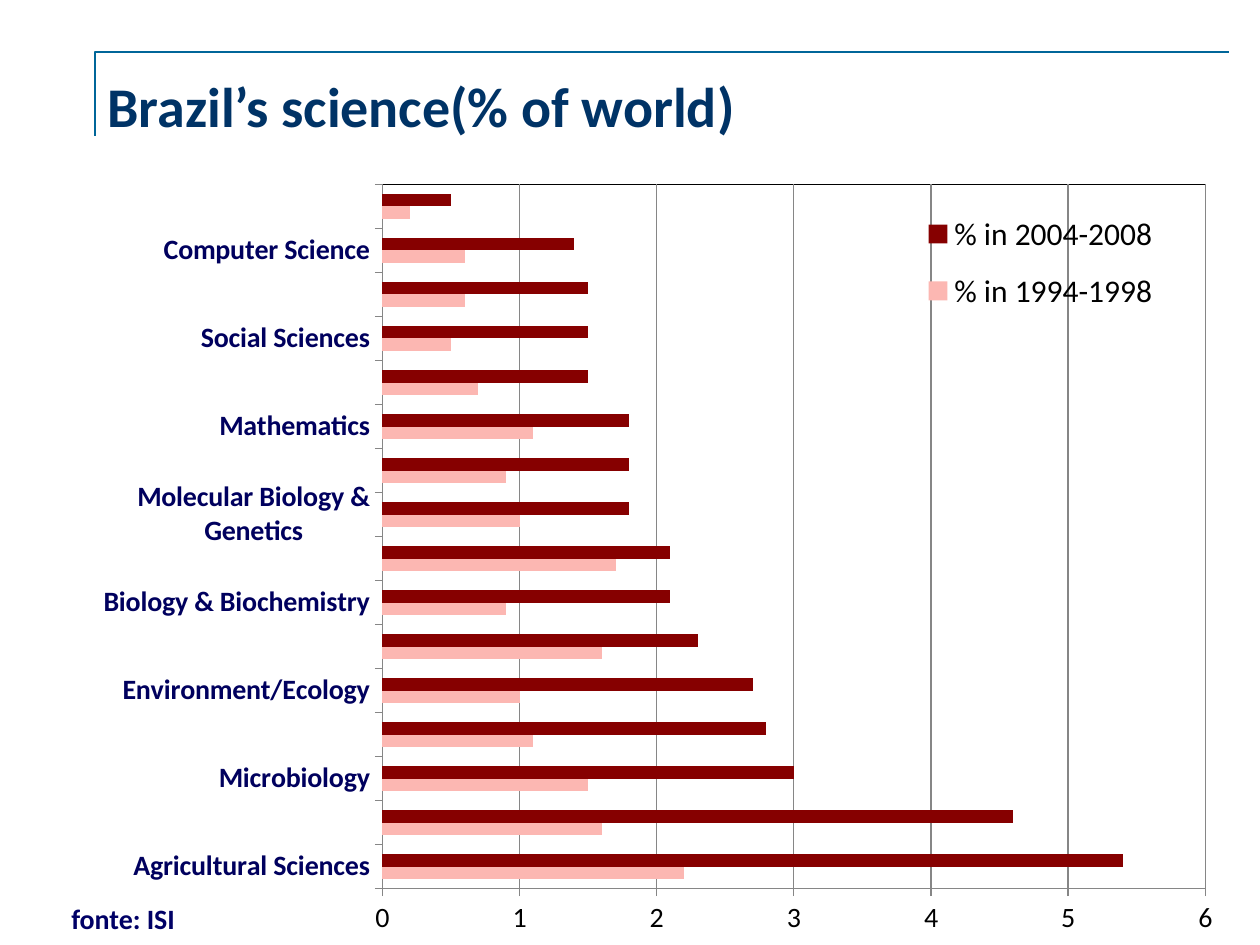
"""Build a slide comparing Brazil's share of world science by field."""
from lxml import etree
from pptx import Presentation
from pptx.chart.data import CategoryChartData
from pptx.dml.color import RGBColor
from pptx.enum.chart import XL_CHART_TYPE as ChartType, XL_LEGEND_POSITION as LegendPosition
from pptx.enum.chart import XL_TICK_MARK as TickMark
from pptx.enum.text import MSO_ANCHOR as Anchor, MSO_AUTO_SIZE as AutoSize, PP_ALIGN as Align
from pptx.oxml import parse_xml
from pptx.oxml.ns import nsdecls, qn
from pptx.util import Emu, Pt

PX = 914400 / 126
BLACK = RGBColor(0x00, 0x00, 0x00)
GRID = RGBColor(0x86, 0x86, 0x86)
FRAME = RGBColor(0x00, 0x66, 0x99)
TITLE = RGBColor(0x00, 0x33, 0x66)
SOURCE = RGBColor(0x00, 0x00, 0x66)
LABEL = RGBColor(0x00, 0x00, 0x5E)
PINK = RGBColor(0xFC, 0xB7, 0xB2)
MAROON = RGBColor(0x86, 0x00, 0x00)

FIELDS = [
    ("Agricultural Sciences", 2.2, 5.4),
    ("Plant & Animal Science", 1.6, 4.6),
    ("Microbiology", 1.5, 3),
    ("Pharmacology & Toxicology", 1.1, 2.8),
    ("Environment/Ecology", 1, 2.7),
    ("Physics", 1.6, 2.3),
    ("Biology & Biochemistry", 0.9, 2.1),
    ("Space Science", 1.7, 2.1),
    ("Molecular Biology & Genetics", 1, 1.8),
    ("Chemistry", 0.9, 1.8),
    ("Mathematics", 1.1, 1.8),
    ("Materials Science", 0.7, 1.5),
    ("Social Sciences", 0.5, 1.5),
    ("Engineering", 0.6, 1.5),
    ("Computer Science", 0.6, 1.4),
    ("Economics & Business", 0.2, 0.5),
]


def box(*lengths):
    return [Emu(round(length * PX)) for length in lengths]


def place(element, index, target, x, y, w, h):
    for layout in element.findall(qn("c:layout")):
        element.remove(layout)
    layout = etree.Element(qn("c:layout"))
    manual = etree.SubElement(layout, qn("c:manualLayout"))
    values = {"xMode": "edge", "yMode": "edge", "x": x, "y": y, "w": w, "h": h}
    if target:
        values = {"layoutTarget": target, **values}
    for name, value in values.items():
        etree.SubElement(manual, qn(f"c:{name}")).set("val", str(value))
    element.insert(index, layout)


presentation = Presentation()
presentation.slide_width, presentation.slide_height = box(1260, 945)
slide = presentation.slides.add_slide(presentation.slide_layouts[5])

builder = slide.shapes.build_freeform(95, 136, scale=PX)
builder.add_line_segments([(95, 52), (1229, 52)], close=False)
frame = builder.convert_to_shape()
frame.shadow.inherit = False
frame.fill.background()
frame.line.color.rgb = FRAME
frame.line.width = Pt(1.5)

title = slide.shapes.title
title.left, title.top, title.width, title.height = box(95, 53, 1124, 105)
source = slide.shapes.add_textbox(*box(59, 896, 164, 49))
texts = [
    (title, "Brazil’s science(% of world)", 32, TITLE, 1),
    (source, "fonte: ISI", 16, SOURCE, 0.9),
]
for shape, text, size, color, spacing in texts:
    text_frame = shape.text_frame
    text_frame.text = text
    text_frame.word_wrap = True
    text_frame.auto_size = AutoSize.NONE
    text_frame.vertical_anchor = Anchor.MIDDLE
    paragraph = text_frame.paragraphs[0]
    paragraph.alignment = Align.LEFT
    paragraph.line_spacing = spacing
    font = paragraph.runs[0].font
    for name, value in {"name": "Calibri", "size": Pt(size), "bold": True}.items():
        setattr(font, name, value)
    font.color.rgb = color

categories, earlier, later = zip(*FIELDS)
data = CategoryChartData()
data.categories = categories
data.add_series("% in 1994-1998", earlier)
data.add_series("% in 2004-2008", later)
chart = slide.shapes.add_chart(ChartType.BAR_CLUSTERED, *box(74, 165, 1186, 780), data).chart
chart.has_title = False
chart.has_legend = True
chart.legend.position = LegendPosition.RIGHT
chart.legend.include_in_layout = False

plot = chart.plots[0]
plot.vary_by_categories = False
plot.gap_width = 150
plot.overlap = 0
for series, color in zip(plot.series, (PINK, MAROON)):
    series.format.fill.solid()
    series.format.fill.fore_color.rgb = color

category_axis, value_axis = chart.category_axis, chart.value_axis
for name, value in {"minimum_scale": 0, "maximum_scale": 6, "major_unit": 1}.items():
    setattr(value_axis, name, value)
value_axis.has_major_gridlines = True
category_axis.tick_labels.number_format = "@"
category_axis.tick_labels.number_format_is_linked = False
for axis in (category_axis, value_axis):
    axis.major_tick_mark = TickMark.OUTSIDE
    axis.minor_tick_mark = TickMark.NONE
for line in (category_axis.format.line, value_axis.format.line, value_axis.major_gridlines.format.line):
    line.color.rgb = GRID
    line.width = Pt(0.75)

chart.font.name = "Lato"
chart.font.size = Pt(10)
chart_fonts = [
    (category_axis.tick_labels.font, 16, True, LABEL),
    (value_axis.tick_labels.font, 16, False, BLACK),
    (chart.legend.font, 18, False, BLACK),
]
for font, size, bold, color in chart_fonts:
    for name, value in {"name": "Calibri", "size": Pt(size), "bold": bold}.items():
        setattr(font, name, value)
    font.color.rgb = color

skip = etree.Element(qn("c:tickLblSkip"))
skip.set("val", "2")
category_axis._element.find(qn("c:noMultiLvlLbl")).addprevious(skip)

plot_area = chart._chartSpace.find(f"{qn('c:chart')}/{qn('c:plotArea')}")
plot_area.append(parse_xml(
    f'<c:spPr {nsdecls("c", "a")}><a:noFill/><a:ln w="9525"><a:solidFill>'
    f'<a:srgbClr val="{BLACK}"/></a:solidFill></a:ln></c:spPr>'
))
place(plot_area, 0, "inner", 0.26, 0.025, 0.694, 0.903)
place(chart.legend._element, 1, None, 0.71, 0.04, 0.21, 0.17)

presentation.save("out.pptx")
